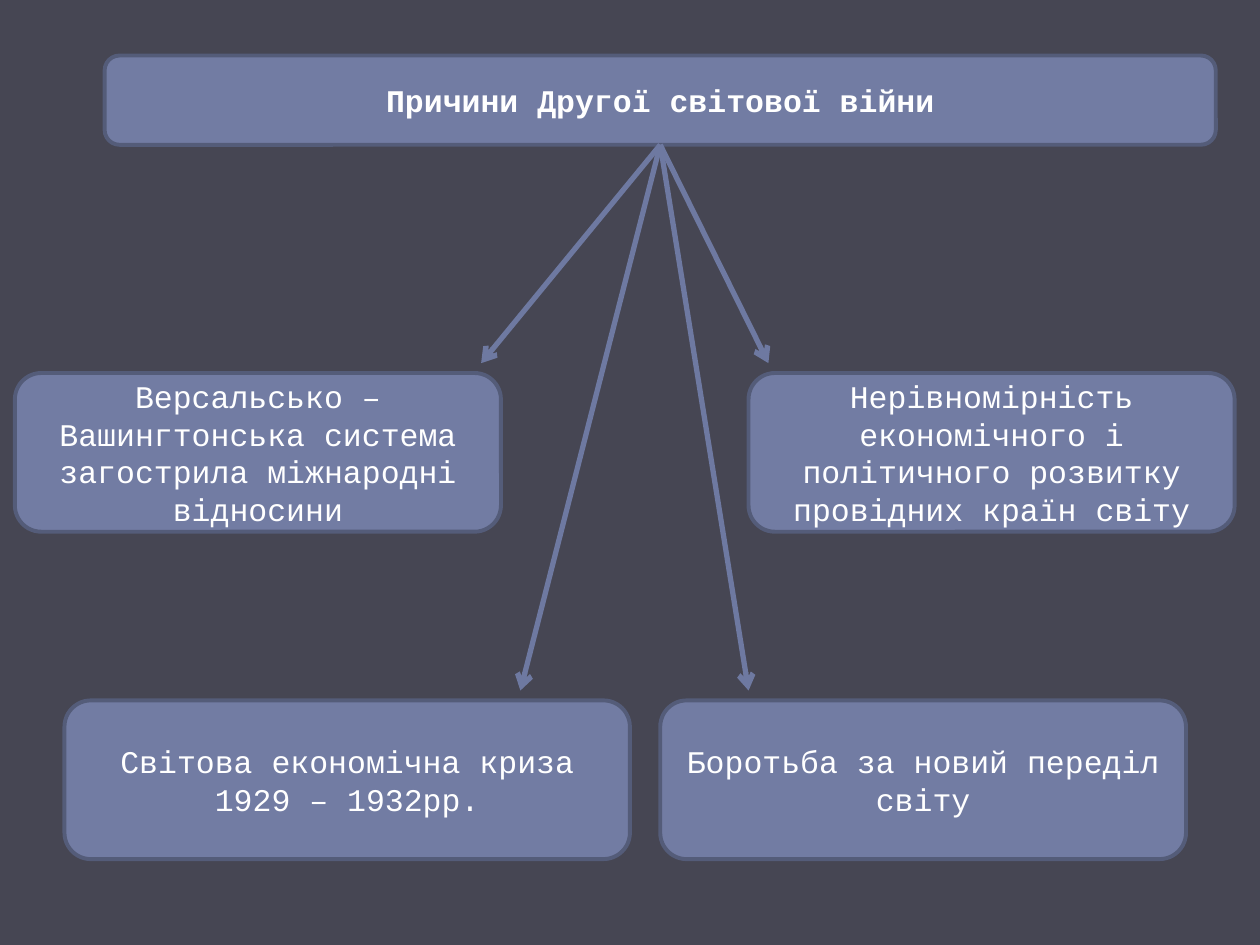
import pptx
import pptx.dml.color
import pptx.enum.shapes
import pptx.enum.text
import pptx.oxml.ns
import pptx.util
from lxml import etree

Cm = pptx.util.Cm
COLORS = {"bg": "464653", "box": "727CA3", "border": "545C79", "arrow": "6E79A1", "text": "FFFFFF"}
FONT = {"name": "Courier New", "size": pptx.util.Pt(18)}
FRAME = {"word_wrap": True, "vertical_anchor": pptx.enum.text.MSO_ANCHOR.MIDDLE}


def rgb(name):
    return pptx.dml.color.RGBColor.from_string(COLORS[name])


def apply(target, values):
    for key, value in values.items():
        setattr(target, key, value)


class Diagram:
    """Draws styled boxes and arrows on the current slide."""

    def __init__(self, s):
        self.s = s
        s.background.fill.solid()
        s.background.fill.fore_color.rgb = rgb("bg")

    def line(self, ln, color, width):
        ln.color.rgb = rgb(color)
        ln.width = pptx.util.Pt(width)

    def box(self, text, x, y, w, h, bold=False):
        kind = pptx.enum.shapes.MSO_SHAPE.ROUNDED_RECTANGLE
        sp = self.s.shapes.add_shape(kind, Cm(x), Cm(y), Cm(w), Cm(h))
        sp.shadow.inherit = False
        sp.fill.solid()
        sp.fill.fore_color.rgb = rgb("box")
        self.line(sp.line, "border", 2.25)
        tf = sp.text_frame
        apply(tf, FRAME)
        p = tf.paragraphs[0]
        p.alignment = pptx.enum.text.PP_ALIGN.CENTER
        r = p.add_run()
        r.text = text
        apply(r.font, {**FONT, "bold": bold})
        r.font.color.rgb = rgb("text")

    def arrow(self, x1, y1, x2, y2):
        kind = pptx.enum.shapes.MSO_CONNECTOR.STRAIGHT
        cn = self.s.shapes.add_connector(kind, Cm(x1), Cm(y1), Cm(x2), Cm(y2))
        self.line(cn.line, "arrow", 3)
        qn = pptx.oxml.ns.qn
        etree.SubElement(cn.line._get_or_add_ln(), qn("a:tailEnd"), type="arrow")
        etree.SubElement(cn._element.spPr, qn("a:effectLst"))


def main():
    prs = pptx.Presentation()
    prs.slide_width, prs.slide_height = Cm(25.4), Cm(19.05)
    d = Diagram(prs.slides.add_slide(prs.slide_layouts[6]))

    left, top, width, height = 2.11, 1.12, 22.4, 1.8
    d.box("Причини Другої світової війни", left, top, width, height, bold=True)

    upper, lower, cause_height, gap = 7.52, 14.12, 3.2, 0.2
    causes = [
        ("Версальсько – Вашингтонська система загострила міжнародні відносини", 0.3, upper, 9.8, 9.7),
        ("Нерівномірність економічного і політичного розвитку провідних країн світу", 15.09, upper, 9.8, 15.49),
        ("Світова економічна криза 1929 – 1932рр.", 1.3, lower, 11.4, 10.49),
        ("Боротьба за новий переділ світу", 13.31, lower, 10.6, 15.09),
    ]
    for text, x, y, w, tip in causes:
        d.box(text, x, y, w, cause_height)
    for text, x, y, w, tip in causes:
        d.arrow(left + width / 2, top + height, tip, y - gap)

    prs.save("out.pptx")


if __name__ == "__main__":
    main()
